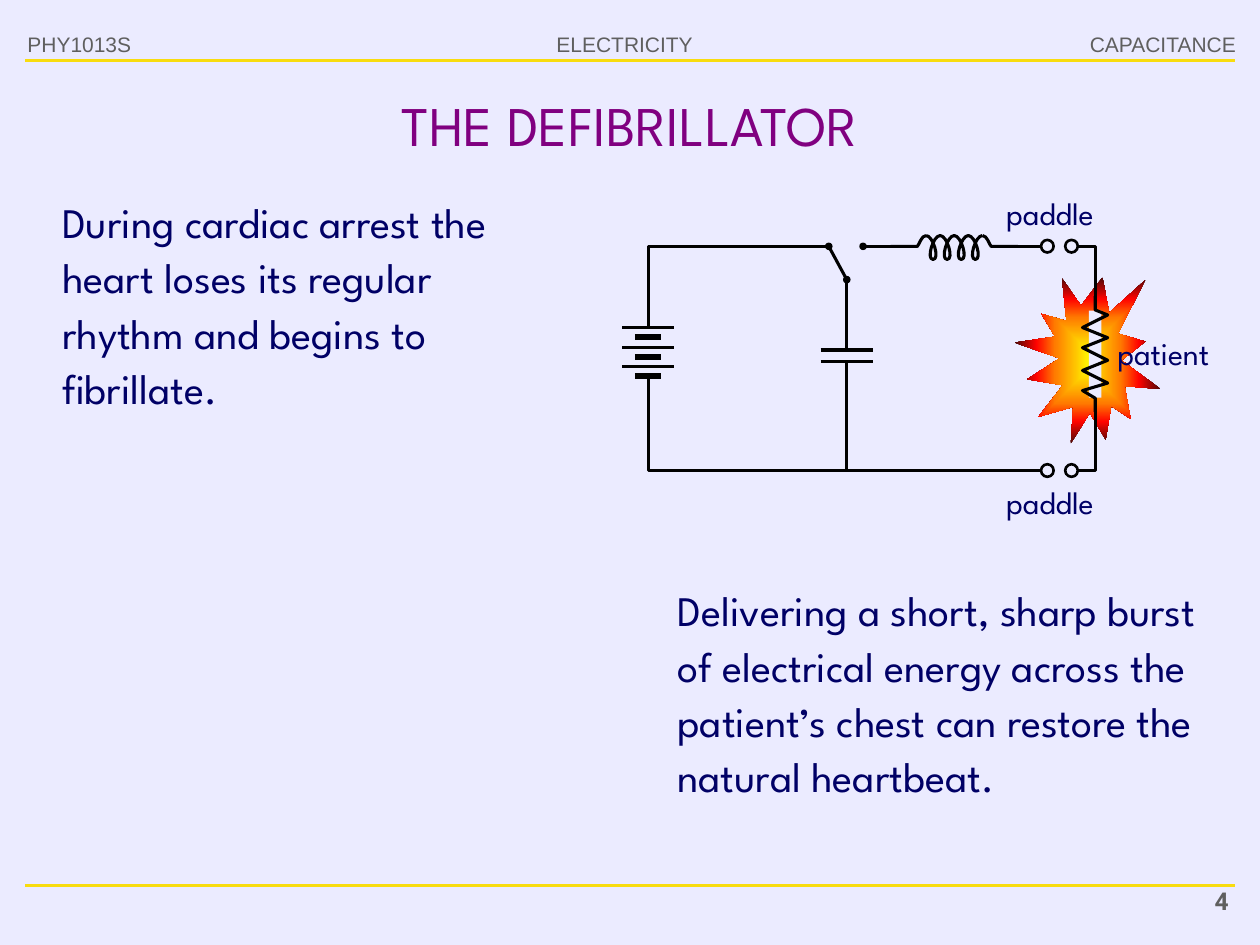
import lxml.etree
import pptx
import pptx.dml.color
import pptx.enum.shapes
import pptx.enum.text
import pptx.oxml
import pptx.oxml.ns
import pptx.util

Pt = pptx.util.Pt
qn = pptx.oxml.ns.qn
MSO = pptx.enum.shapes.MSO_SHAPE
ALIGN = pptx.enum.text.PP_ALIGN
STRAIGHT = pptx.enum.shapes.MSO_CONNECTOR.STRAIGHT

PAPER, BLACK, YELLOW = "EBEBFF", "000000", "F8DC0E"
GREY, PURPLE, NAVY = "5F5F5F", "800080", "000066"


def rgb(value):
    return pptx.dml.color.RGBColor.from_string(value)


def add_text(text, x, y, w, h, size=12, font="Arial", color=GREY, bold=False,
             align=ALIGN.LEFT, indent=0, spacing=None, middle=False):
    tf = s.shapes.add_textbox(Pt(x), Pt(y), Pt(w), Pt(h)).text_frame
    tf.word_wrap = True
    if middle:
        tf.vertical_anchor = pptx.enum.text.MSO_ANCHOR.MIDDLE
    p = tf.paragraphs[0]
    p.alignment = align
    p.line_spacing = spacing
    if indent:
        p._p.get_or_add_pPr().set("marL", str(Pt(indent)))
    r = p.add_run()
    r.text = text
    r.font.size, r.font.name, r.font.bold = Pt(size), font, bold
    r.font.color.rgb = rgb(color)


prs = pptx.Presentation()
prs.slide_width, prs.slide_height = Pt(720), Pt(540)
s = prs.slides.add_slide(prs.slide_layouts[6])
s.background.fill.solid()
s.background.fill.fore_color.rgb = rgb(PAPER)

# Header, footer and title
add_text("ELECTRICITY", 307, 14.4, 100, 21.6, align=ALIGN.CENTER)
add_text("CAPACITANCE", 613.4, 14.4, 100, 21.6, align=ALIGN.RIGHT)
add_text("PHY1013S", 8.6, 14.4, 85, 23)
add_text("4", 635, 502.6, 74.2, 26.6, size=14, font="Roboto", bold=True,
         align=ALIGN.RIGHT)
add_text("THE DEFIBRILLATOR", 36, 45, 648, 51.8, size=32,
         font="League Spartan", color=PURPLE, align=ALIGN.CENTER, middle=True)

# Shock burst behind the patient
sp = s.shapes.add_shape(MSO.EXPLOSION1, Pt(574), Pt(164.2), Pt(95), Pt(83.5))
sp.shadow.inherit = False
sp.rotation = 90
sp.line.fill.background()
sp.fill.gradient()
grad = sp._element.spPr.find(qn("a:gradFill"))
grad.clear()
stops = lxml.etree.SubElement(grad, qn("a:gsLst"))
for pos, color in ((0, "FFF200"), (45, "FF7A00"), (70, "FF0300"), (100, "4D0808")):
    gs = lxml.etree.SubElement(stops, qn("a:gs"), pos=str(pos * 1000))
    lxml.etree.SubElement(gs, qn("a:srgbClr"), val=color)
shade = lxml.etree.SubElement(grad, qn("a:path"), path="shape")
lxml.etree.SubElement(shade, qn("a:fillToRect"), l="50000", t="50000",
                      r="50000", b="50000")

# Circuit geometry
top, bottom, left, right = 140.8, 269, 370.8, 625.8
cap_x, pivot_y = 483.9, 159.8
throw_x, contact_x, paddle_x = 473.6, 493.2, 594.9

# Coil: a start point, then three control points for each curve
coil_x, pitch, crest, trough = 529.2, 8.05, 134.6, 148.3
coil_end = coil_x + 4 * pitch
coil = [(coil_x, crest)]
for i in range(4):
    a = coil_x + i * pitch
    m, b = a + pitch / 2, a + pitch
    coil += [(m, crest), (b, trough), (m, trough),
             (a, trough), (m, crest), (b, crest)]
leads = [[(x, crest), (x + d * 2.7, crest), (x + d * 3.8, 139.7),
          (x + d * 5, top), (x + d * 20.2, top)]
         for x, d in ((coil_end, 1), (coil_x, -1))]

# Resistor: zigzag on the right-hand wire
zigzag_y = (223.2, 218.9, 211.7, 205.9, 198.7, 193, 187.2, 180)
zigzag = [(right + (7.2 if i % 2 else -7.2), y) for i, y in enumerate(zigzag_y)]
resistor = [(right, 235.4), (right, 227.5), *zigzag, (right, 177.1), (right, 169.2)]

# Parts from back to front: lines (ends, colour, width), gaps (box, turn),
# paths, curves, dots and terminals
parts = [("line", 14.4, y, 705.6, y, YELLOW, 1.75) for y in (34.6, 506.2)]
parts += [
    ("line", cap_x, pivot_y, cap_x, bottom, BLACK, 1.75),
    ("gap", 486.7, 140.4, 3.6, 20.2, 26),
    ("line", cap_x, pivot_y, throw_x, top, BLACK, 1.75),
    ("gap", cap_x - 2.9, 200, 5.8, 6.8, 0),
    *(("gap", paddle_x, y - 3.8, 21.6, 7.9, 0) for y in (top, bottom)),
    ("line", contact_x, top, paddle_x, top, BLACK, 1.75),
    ("path", [(throw_x, top), (left, top), (left, bottom), (paddle_x, bottom)]),
    ("path", [(616, top), (right, top), (right, bottom), (616, bottom)]),
    ("gap", left - 3.2, 187.2, 6.4, 28.8, 0),
    ("gap", right - 3.6, 177.5, 7.2, 49.7, 0),
    ("gap", 520.6, 137.5, 49, 5.8, 0),
    ("curve", coil),
    *(("curve", lead) for lead in leads),
    ("path", resistor),
]
parts += [("line", cap_x - 15, y, cap_x + 15, y, BLACK, 1.75) for y in (200, 206.6)]
cell_x = left - .5
for i in range(3):
    y = 187.2 + 11.2 * i
    parts += [("line", cell_x - 14.8, y, cell_x + 14.8, y, BLACK, 1.75),
              ("line", cell_x - 7.5, y + 5.5, cell_x + 7.5, y + 5.5, BLACK, 3.5)]
parts += [("dot", x - 2.15, y - 2.15, 4.3, 4.3)
          for x, y in ((throw_x, top), (contact_x, top), (cap_x, pivot_y))]
parts += [("terminal", x, y - 3.7, 7.2, 7.2)
          for x in (paddle_x, 608.7) for y in (top, bottom)]

for kind, *args in parts:
    width, color = 1.75, BLACK
    if kind == "line":
        *ends, color, width = args
        sp = s.shapes.add_connector(STRAIGHT, *(Pt(v) for v in ends))
        lxml.etree.SubElement(sp._element.spPr, qn("a:effectLst"))
    elif kind in ("path", "curve"):
        pts = [(Pt(x), Pt(y)) for x, y in args[0]]
        fb = s.shapes.build_freeform(*pts[0])
        fb.add_line_segments(pts[1:], close=False)
        sp = fb.convert_to_shape()
        sp.shadow.inherit = False
        sp.fill.background()
        if kind == "curve":
            # Each full group of three segments becomes one cubic curve
            segs = list(sp._element.spPr.iter(qn("a:lnTo")))
            for i in range(0, len(segs) - 2, 3):
                cubic = lxml.etree.Element(qn("a:cubicBezTo"))
                segs[i].addprevious(cubic)
                for seg in segs[i:i + 3]:
                    cubic.append(seg[0])
                    seg.getparent().remove(seg)
    else:
        shape = MSO.RECTANGLE if kind == "gap" else MSO.OVAL
        sp = s.shapes.add_shape(shape, *(Pt(v) for v in args[:4]))
        sp.shadow.inherit = False
        sp.fill.solid()
        sp.fill.fore_color.rgb = rgb(BLACK if kind == "dot" else PAPER)
        if kind == "gap":
            sp.rotation = args[4]
        width = 1.5
    if kind in ("gap", "dot"):
        sp.line.fill.background()
    else:
        sp.line.color.rgb = rgb(color)
        sp.line.width = Pt(width)

# Circuit labels and body text
for text, x, y, w, h, size in (
        ("paddle", 553.4, 105.1, 90.7, 31, 18),
        ("patient", 617, 185, 90.7, 31, 18),
        ("paddle", 553.4, 270.2, 90.7, 31, 18),
        ("During cardiac arrest the heart loses its regular rhythm and begins "
         "to fibrillate.", 14, 105.8, 301, 133.9, 24),
        ("Delivering a short, sharp burst of electrical energy across the "
         "patient’s chest can restore the natural heartbeat.",
         365.7, 327.7, 337, 165.6, 24)):
    add_text(text, x, y, w, h, size=size, font="League Spartan", color=NAVY,
             indent=14.4, spacing=1.1)

prs.save("out.pptx")
